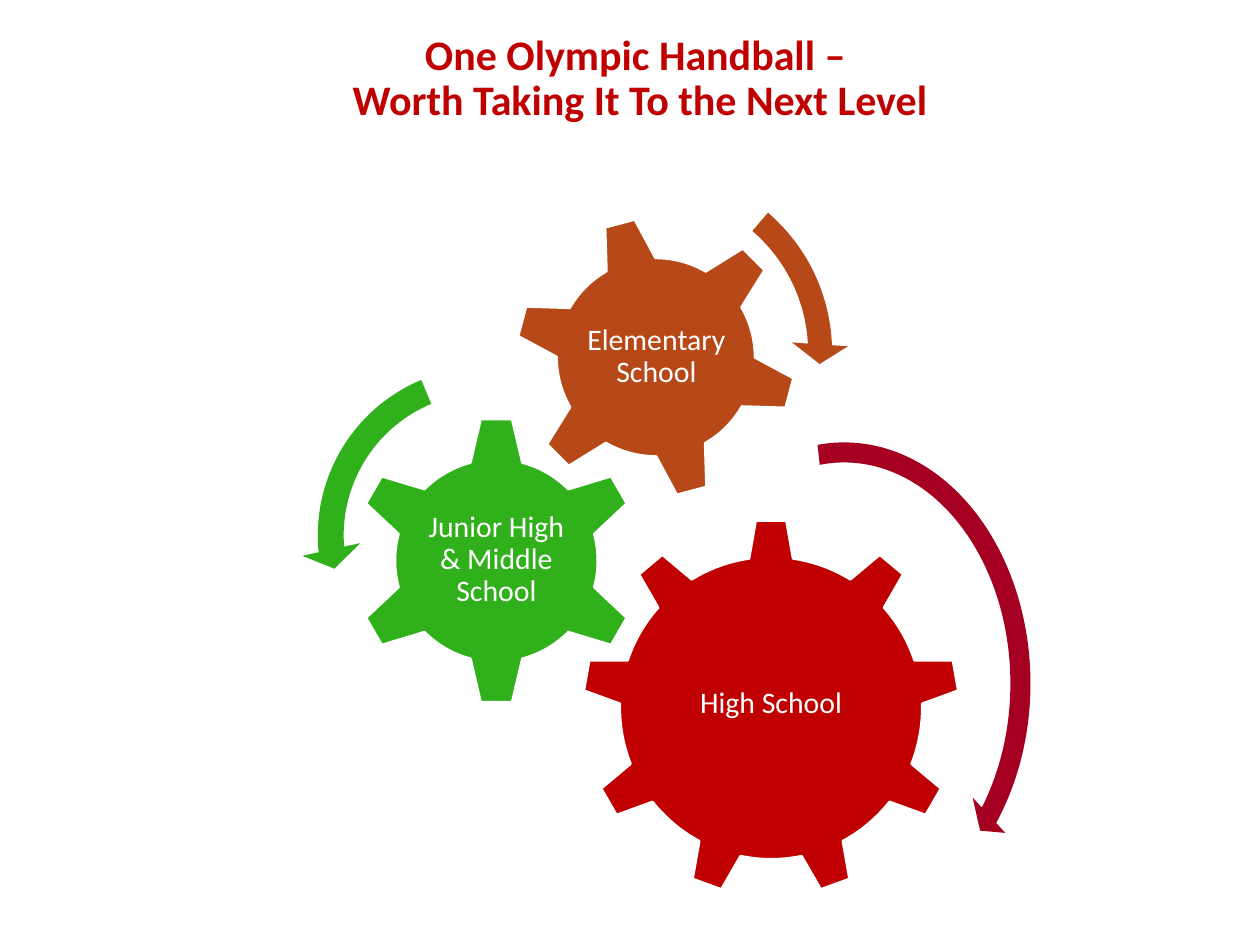
from pptx import Presentation
from pptx import util as u
from pptx.dml.color import RGBColor
from pptx.enum import shapes, text

HUES = {"red": "C00000", "green": "30B01B", "rust": "B74919",
        "wine": "A50021", "white": "FFFFFF"}
KIND = shapes.MSO_SHAPE


class Deck:
    """Holds the style and the current slide, and draws each kind of element."""

    def __init__(self):
        self.deck = Presentation()
        self.deck.slide_width = u.Inches(10)
        self.deck.slide_height = u.Inches(7.5)
        self.slide = self.deck.slides.add_slide(self.deck.slide_layouts[5])
        self.font = "Calibri"

    def hue(self, name):
        return RGBColor.from_string(HUES[name])

    def style(self, frame, words, size, hue, bold=False):
        frame.text = words
        frame.word_wrap = True
        frame.vertical_anchor = text.MSO_ANCHOR.MIDDLE
        for para in frame.paragraphs:
            para.alignment = text.PP_ALIGN.CENTER
            para.line_spacing = 0.9
            for run in para.runs:
                run.font.name = self.font
                run.font.size = u.Pt(size)
                run.font.bold = bold
                run.font.color.rgb = self.hue(hue)

    def title(self, words, box):
        head = self.slide.shapes.title
        head.left, head.top, head.width, head.height = map(u.Inches, box)
        self.style(head.text_frame, words, 24, "red", True)

    def shape(self, kind, box, hue, turn=0):
        item = self.slide.shapes.add_shape(kind, *map(u.Inches, box))
        item.shadow.inherit = False
        item.fill.solid()
        item.fill.fore_color.rgb = self.hue(hue)
        item.rotation = turn
        return item

    def gear(self, kind, box, hue, turn=0):
        item = self.shape(kind, box, hue, turn)
        item.line.color.rgb = self.hue("white")
        item.line.width = u.Pt(1.5)

    def label(self, words, box):
        frame = self.slide.shapes.add_textbox(*map(u.Inches, box)).text_frame
        frame.margin_left = frame.margin_right = u.Inches(0.02)
        frame.margin_top = frame.margin_bottom = u.Inches(0.02)
        self.style(frame, words, 17, "white")

    def arrow(self, kind, box, hue, bends, turn=0):
        item = self.shape(kind, box, hue, turn)
        item.line.fill.background()
        for spot, bend in enumerate(bends):
            item.adjustments[spot] = bend


def main():
    deck = Deck()
    deck.title("One Olympic Handball – \vWorth Taking It To the Next Level",
               (0.33, 0.17, 9.5, 0.92))

    deck.gear(KIND.GEAR_9, (4.62, 4.12, 3, 3), "red")
    deck.label("High School", (5.22, 4.82, 1.8, 1.54))
    deck.gear(KIND.GEAR_6, (2.79, 3.3, 2.3, 2.3), "green")
    deck.label("Junior High & Middle School", (3.37, 3.88, 1.14, 1.13))
    deck.gear(KIND.GEAR_6, (4.08, 1.71, 2.25, 2.25), "rust", 345)
    deck.label("Elementary School", (4.58, 2.2, 1.26, 1.26))

    deck.arrow(KIND.CIRCULAR_ARROW, (5.11, 3.4, 3.18, 4.05), "wine",
               (0.05, 2.99, 25.37, 158.18, 0.06))
    deck.arrow(KIND.LEFT_CIRCULAR_ARROW, (2.39, 2.78, 2.94, 2.94), "green",
               (0.07, 4.3, 104.89, 148.38, 0.08))
    deck.arrow(KIND.CIRCULAR_ARROW, (3.56, 1.21, 3.17, 3.17), "rust",
               (0.06, 3.94, 133.14, 105.08, 0.07), 135.5)
    deck.deck.save("out.pptx")


if __name__ == "__main__":
    main()
